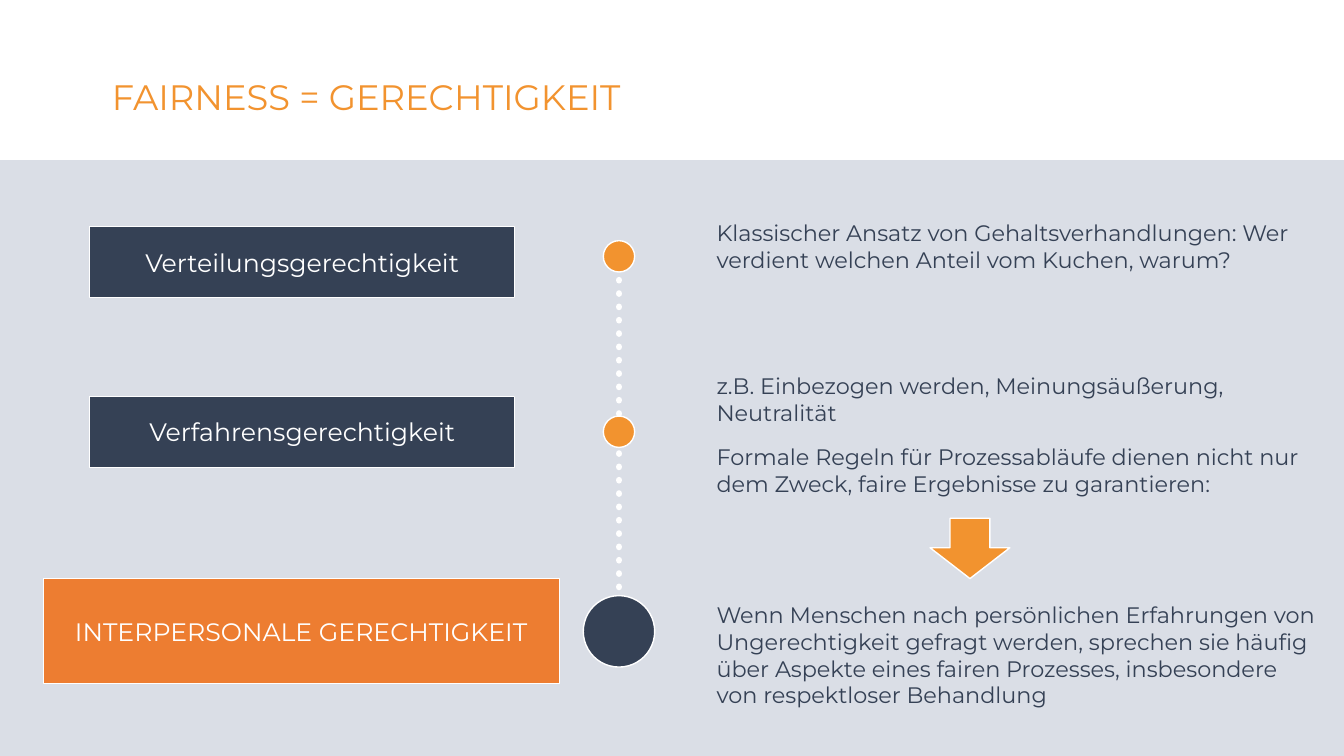
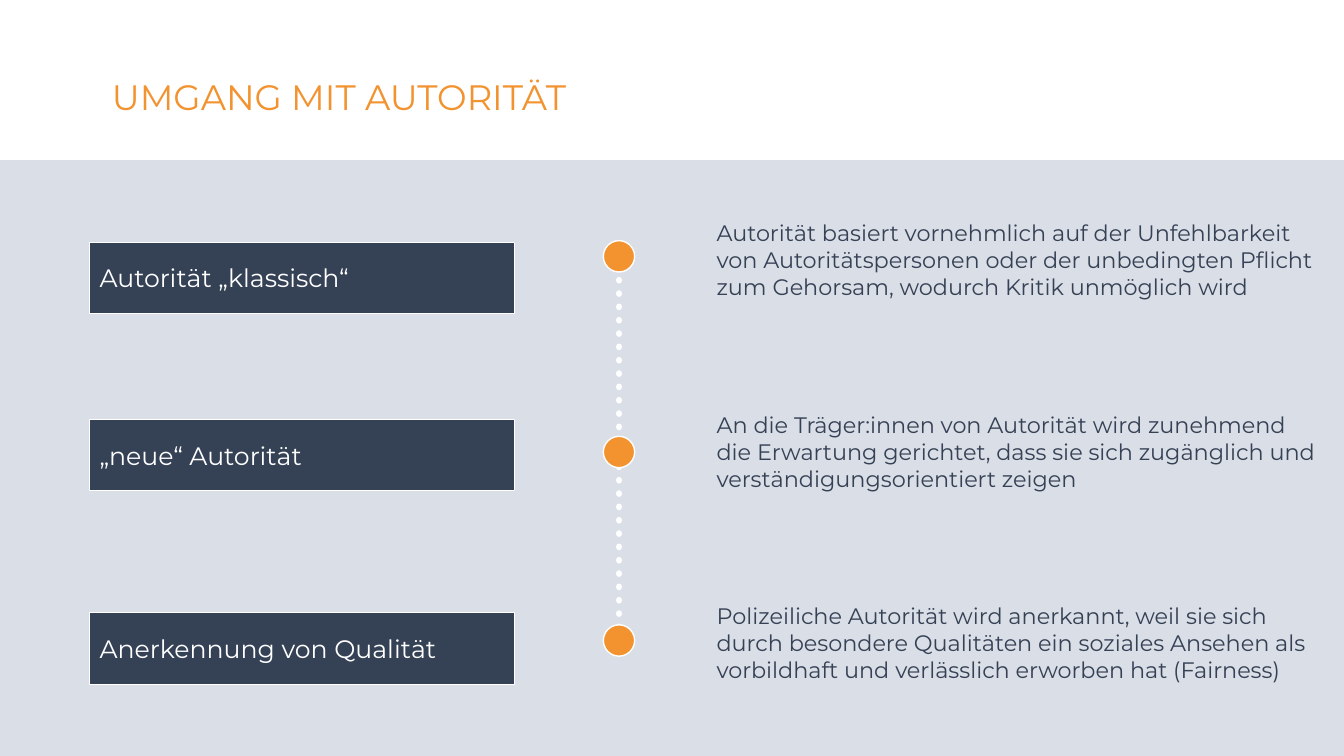
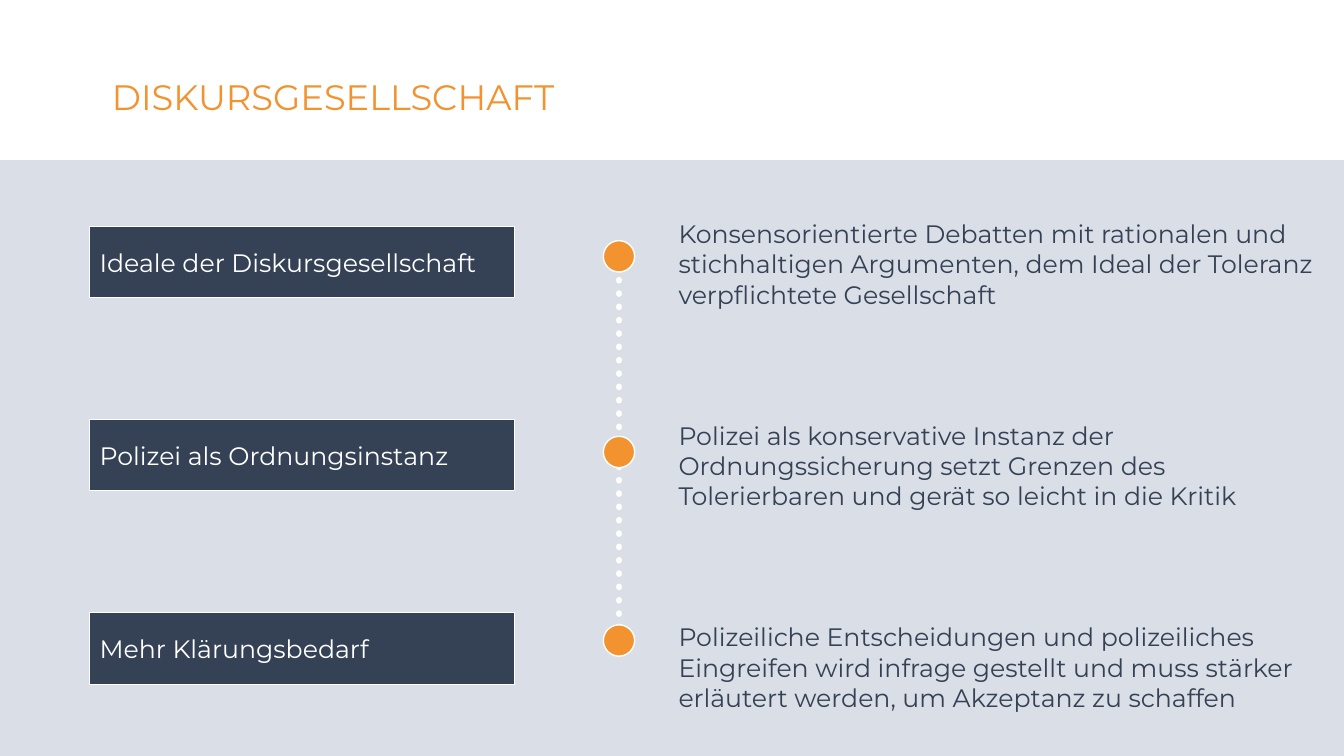
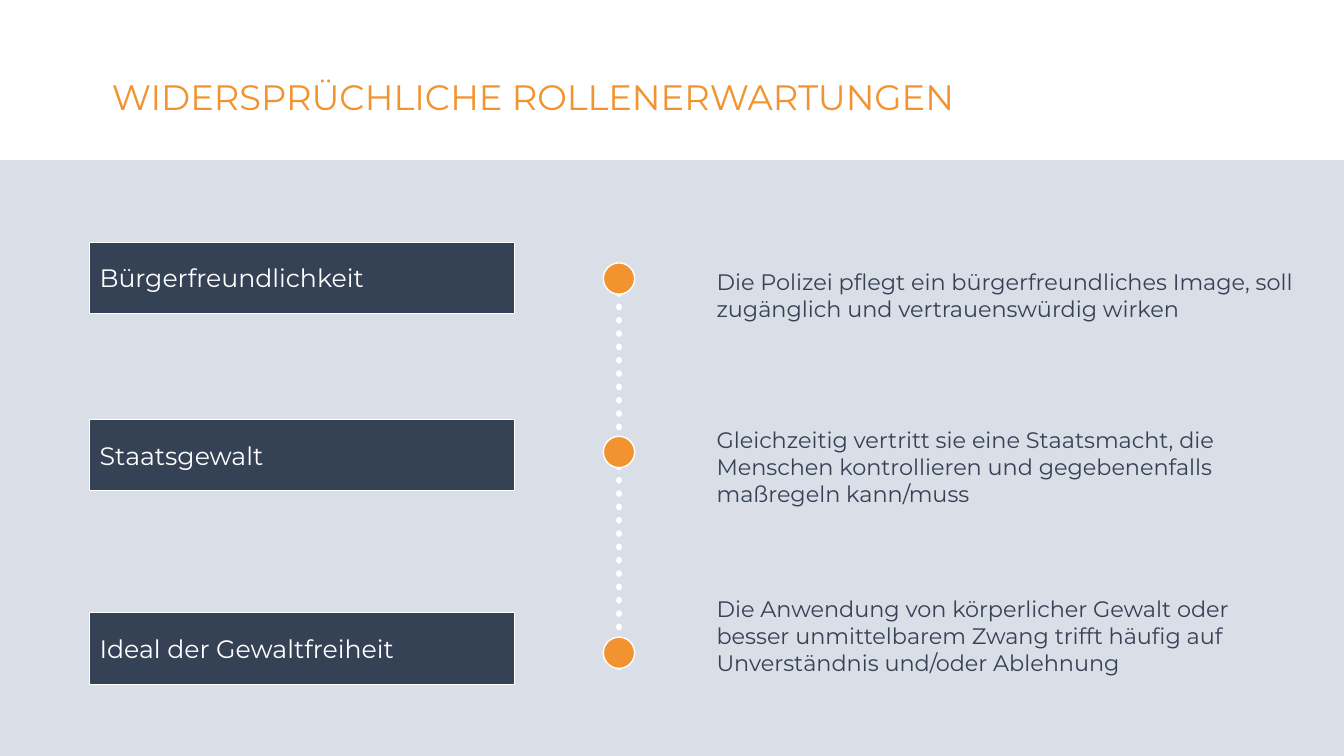
from dataclasses import dataclass

from lxml.etree import SubElement
from pptx import Presentation
from pptx.dml.color import RGBColor
from pptx.enum.dml import MSO_LINE
from pptx.enum.shapes import MSO_CONNECTOR, MSO_SHAPE
from pptx.enum.text import MSO_ANCHOR, PP_ALIGN
from pptx.oxml.ns import qn
from pptx.util import Cm, Pt


@dataclass(frozen=True)
class Theme:
    font: str = "Montserrat"
    back: RGBColor = RGBColor.from_string("DADEE6")
    white: RGBColor = RGBColor.from_string("FFFFFF")
    navy: RGBColor = RGBColor.from_string("354155")
    gold: RGBColor = RGBColor.from_string("F2932F")
    orange: RGBColor = RGBColor.from_string("ED7D31")
    title: float = 25.2
    label: float = 18
    note: float = 16


theme = Theme()

# Lengths in cm
WIDE, HIGH = 33.87, 19.05
AXIS = 15.6
DOT, DISC = 0.79, 1.8
LABEL = (2.26, 10.72, 1.8)  # left, width, height
FOCUS = (1.09, 13, 2.64)

# Labels: text, top, dot centre. Notes: text, gap above in points.
pages = [
    dict(
        title="FAIRNESS = GERECHTIGKEIT",
        focus=2,
        align=PP_ALIGN.CENTER,
        end=15.95,
        labels=[
            ("Verteilungsgerechtigkeit", 5.71, 6.46),
            ("Verfahrensgerechtigkeit", 9.98, 10.88),
            ("INTERPERSONALE GERECHTIGKEIT", 14.58, 15.91),
        ],
        box=(16.94, 5.41, 16.56, 14.02),
        size=theme.note,
        notes=[
            ("Klassischer Ansatz von Gehaltsverhandlungen: Wer verdient welchen Anteil vom Kuchen, warum?", 0),
            ("z.B. Einbezogen werden, Meinungsäußerung, Neutralität", 70.8),
            ("Formale Regeln für Prozessabläufe dienen nicht nur dem Zweck, faire Ergebnisse zu garantieren:", 12),
            ("Wenn Menschen nach persönlichen Erfahrungen von Ungerechtigkeit gefragt werden, sprechen sie häufig "
             "über Aspekte eines fairen Prozesses, insbesondere von respektloser Behandlung", 74.4),
        ],
    ),
    dict(
        title="UMGANG MIT AUTORITÄT",
        focus=None,
        align=PP_ALIGN.LEFT,
        end=15.95,
        labels=[
            ("Autorität „klassisch“", 6.1, 6.46),
            ("„neue“ Autorität", 10.57, 11.39),
            ("Anerkennung von Qualität", 15.44, 16.14),
        ],
        box=(16.94, 5.41, 16.56, 14.02),
        size=theme.note,
        notes=[
            ("Autorität basiert vornehmlich auf der Unfehlbarkeit von Autoritätspersonen oder der unbedingten "
             "Pflicht zum Gehorsam, wodurch Kritik unmöglich wird", 0),
            ("An die Träger:innen von Autorität wird zunehmend die Erwartung gerichtet, dass sie sich zugänglich "
             "und verständigungsorientiert zeigen", 79.2),
            ("Polizeiliche Autorität wird anerkannt, weil sie sich durch besondere Qualitäten ein soziales Ansehen "
             "als vorbildhaft und verlässlich erworben hat (Fairness)", 79.2),
        ],
    ),
    dict(
        title="DISKURSGESELLSCHAFT",
        focus=None,
        align=PP_ALIGN.LEFT,
        end=15.95,
        labels=[
            ("Ideale der Diskursgesellschaft", 5.71, 6.46),
            ("Polizei als Ordnungsinstanz", 10.57, 11.39),
            ("Mehr Klärungsbedarf", 15.44, 16.14),
        ],
        box=(15.98, 5.38, 17.88, 13.41),
        size=theme.label,
        notes=[
            ("Konsensorientierte Debatten mit rationalen und stichhaltigen Argumenten, dem Ideal der Toleranz "
             "verpflichtete Gesellschaft", 0),
            ("Polizei als konservative Instanz der Ordnungssicherung setzt Grenzen des Tolerierbaren und gerät "
             "so leicht in die Kritik", 79.2),
            ("Polizeiliche Entscheidungen und polizeiliches Eingreifen wird infrage gestellt und muss stärker "
             "erläutert werden, um Akzeptanz zu schaffen", 79.2),
        ],
    ),
    dict(
        title="WIDERSPRÜCHLICHE ROLLENERWARTUNGEN",
        focus=None,
        align=PP_ALIGN.LEFT,
        end=16.84,
        labels=[
            ("Bürgerfreundlichkeit", 6.1, 7.02),
            ("Staatsgewalt", 10.57, 11.39),
            ("Ideal der Gewaltfreiheit", 15.44, 16.45),
        ],
        box=(16.94, 6.63, 16.05, 12.04),
        size=theme.note,
        notes=[
            ("Die Polizei pflegt ein bürgerfreundliches Image, soll zugänglich und vertrauenswürdig wirken", 0),
            ("Gleichzeitig vertritt sie eine Staatsmacht, die Menschen kontrollieren und gegebenenfalls "
             "maßregeln kann/muss", 74.4),
            ("Die Anwendung von körperlicher Gewalt oder besser unmittelbarem Zwang trifft häufig auf "
             "Unverständnis und/oder Ablehnung", 63.6),
        ],
    ),
]


def draw(slide, kind, box, fill, width=1):
    """Add a filled shape with a white outline."""
    shape = slide.shapes.add_shape(kind, *map(Cm, box))
    shape.shadow.inherit = False
    shape.fill.solid()
    shape.fill.fore_color.rgb = fill
    shape.line.color.rgb = theme.white
    shape.line.width = Pt(width)
    return shape


def write(par, text, size, color):
    """Fill a paragraph with text in the shared font."""
    par.text = text
    par.font.name = theme.font
    par.font.size = Pt(size)
    par.font.color.rgb = color


prs = Presentation()
prs.slide_width, prs.slide_height = Cm(WIDE), Cm(HIGH)
back = prs.slide_master.background.fill
back.solid()
back.fore_color.rgb = theme.back

for page in pages:
    slide = prs.slides.add_slide(prs.slide_layouts[6])

    # Title band
    draw(slide, MSO_SHAPE.RECTANGLE, (0, 0, WIDE, 4.02), theme.white)
    frame = slide.shapes.add_textbox(Cm(2.57), Cm(1.85), Cm(23.5), Cm(1.3)).text_frame
    frame.word_wrap = True
    frame.vertical_anchor = MSO_ANCHOR.MIDDLE
    write(frame.paragraphs[0], page["title"], theme.title, theme.gold)
    frame.paragraphs[0].line_spacing = 0.9

    # Dotted axis
    axis = slide.shapes.add_connector(
        MSO_CONNECTOR.STRAIGHT, Cm(AXIS), Cm(7.06), Cm(AXIS), Cm(page["end"]))
    axis.line.color.rgb = theme.white
    axis.line.width = Pt(4.75)
    axis.line.dash_style = MSO_LINE.ROUND_DOT
    props = axis.element.spPr
    props.find(qn("a:ln")).set("cap", "rnd")
    SubElement(props, qn("a:effectLst"))

    # Labels and dots
    for num, (text, top, mid) in enumerate(page["labels"]):
        focus = num == page["focus"]
        left, width, height = FOCUS if focus else LABEL
        label = draw(slide, MSO_SHAPE.RECTANGLE, (left, top, width, height),
                     theme.orange if focus else theme.navy, 0.75)
        label.text_frame.word_wrap = True
        label.text_frame.vertical_anchor = MSO_ANCHOR.MIDDLE
        par = label.text_frame.paragraphs[0]
        write(par, text, theme.label, theme.white)
        par.alignment = page["align"]

        size = DISC if focus else DOT
        draw(slide, MSO_SHAPE.OVAL, (AXIS - size / 2, mid - size / 2, size, size),
             theme.navy if focus else theme.gold)

    # Notes
    frame = slide.shapes.add_textbox(*map(Cm, page["box"])).text_frame
    frame.word_wrap = True
    frame.margin_left = Cm(1.12)
    for num, (text, gap) in enumerate(page["notes"]):
        par = frame.add_paragraph() if num else frame.paragraphs[0]
        write(par, text, page["size"], theme.navy)
        par.space_before = Pt(gap)

    # Arrow to the conclusion
    if page["focus"] is not None:
        arrow = draw(slide, MSO_SHAPE.DOWN_ARROW, (23.44, 13.06, 2.01, 1.52), theme.gold)
        arrow.adjustments[1] = 0.51

prs.save("out.pptx")
